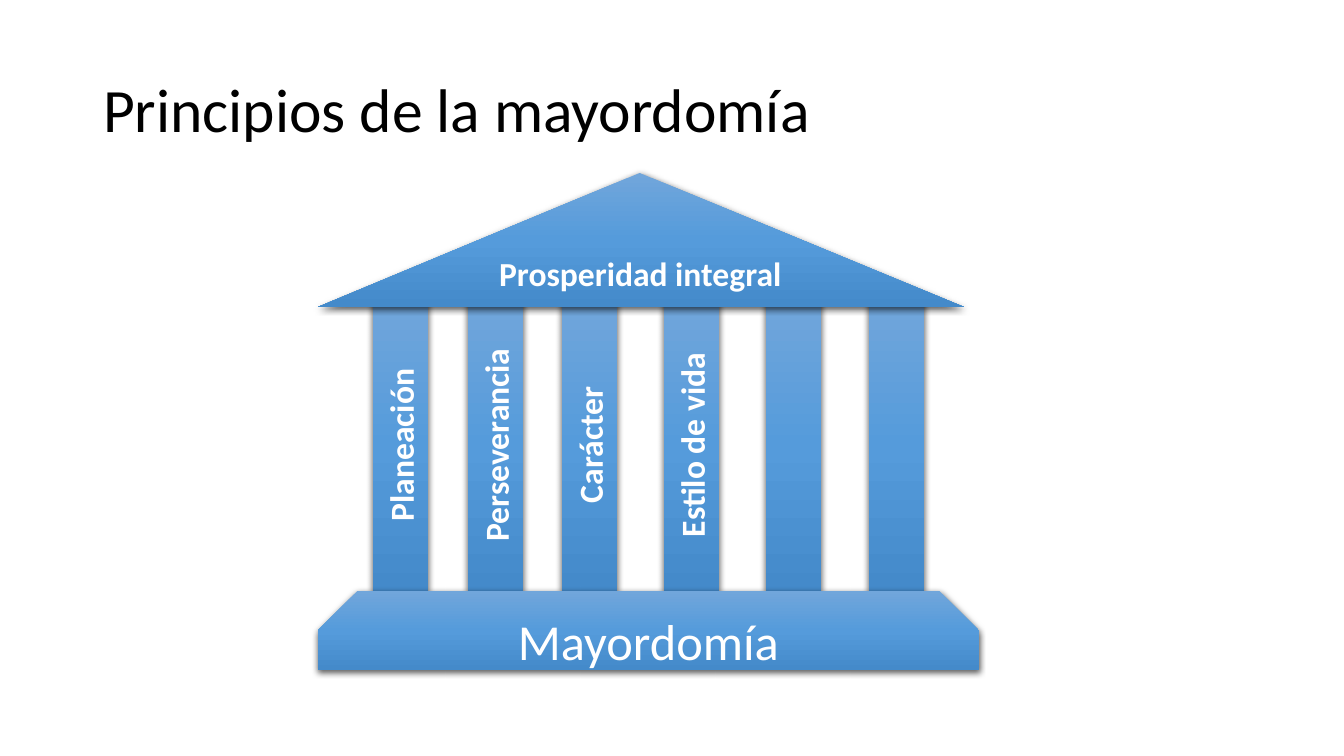
from lxml.etree import SubElement
from pptx import Presentation
from pptx.dml.color import RGBColor
from pptx.enum.shapes import MSO_SHAPE as Preset
from pptx.enum.text import MSO_ANCHOR as Anchor, PP_ALIGN as Align
from pptx.oxml.ns import qn
from pptx.util import Emu, Pt

BLACK = RGBColor(0x00, 0x00, 0x00)
WHITE = RGBColor(0xFF, 0xFF, 0xFF)
LIGHT_BLUE = RGBColor(0x71, 0xA6, 0xDB)
MID_BLUE = RGBColor(0x55, 0x9B, 0xDB)
DEEP_BLUE = RGBColor(0x44, 0x8A, 0xCA)

PILLARS = [(373, "Planeación"), (468, "Perseverancia"), (562, "Carácter"),
           (664, "Estilo de vida"), (766, ""), (869, "")]
PILLAR_TOP, PILLAR_WIDTH, BASE_TOP = 299, 55, 591


def px(length):
    return Emu(round(length * 914400 / 100.8))


class TempleSlide:
    font_name = "Calibri"
    gradient = [(0, LIGHT_BLUE), (50, MID_BLUE), (100, DEEP_BLUE)]

    def __init__(self, presentation):
        self.slide = presentation.slides.add_slide(presentation.slide_layouts[5])

    def set_text(self, shape, text, size, color, align, bold=False):
        frame = shape.text_frame
        frame.word_wrap = True
        frame.vertical_anchor = Anchor.MIDDLE
        paragraph = frame.paragraphs[0]
        paragraph.text = text
        paragraph.alignment = align
        font = paragraph.font
        font.name, font.size, font.bold = self.font_name, Pt(size), bold
        font.color.rgb = color
        return paragraph

    def title(self, text, left, top, width, height):
        shape = self.slide.shapes.title
        shape.left, shape.top = px(left), px(top)
        shape.width, shape.height = px(width), px(height)
        self.set_text(shape, text, 44, BLACK, Align.LEFT).line_spacing = 0.9

    def block(self, preset, left, top, width, height, text="", size=24,
              bold=True, adjustments=(), upward=False):
        """Add a gradient shape with a soft shadow; upward turns its text."""
        shape = self.slide.shapes.add_shape(
            preset, px(left), px(top), px(width), px(height))
        for index, value in enumerate(adjustments):
            shape.adjustments[index] = value
        shape.line.fill.background()
        self.paint(shape)
        self.cast_shadow(shape)
        if text:
            self.set_text(shape, text, size, WHITE, Align.CENTER, bold)
        if upward:
            shape.text_frame._txBody.bodyPr.set("vert", "vert270")

    def paint(self, shape):
        shape.fill.gradient()
        shape.fill.gradient_angle = 270
        stops = shape._element.spPr.find(qn("a:gradFill")).find(qn("a:gsLst"))
        for stop in list(stops):
            stops.remove(stop)
        for percent, color in self.gradient:
            stop = SubElement(stops, qn("a:gs"), pos=str(percent * 1000))
            SubElement(stop, qn("a:srgbClr"), val=str(color))

    def cast_shadow(self, shape):
        shape.shadow.inherit = False
        effects = shape._element.spPr.find(qn("a:effectLst"))
        shadow = SubElement(effects, qn("a:outerShdw"), blurRad=str(Pt(4.5)),
                            dist=str(Pt(1.5)), dir="5400000",
                            algn="ctr", rotWithShape="0")
        color = SubElement(shadow, qn("a:srgbClr"), val=str(BLACK))
        SubElement(color, qn("a:alpha"), val="63000")


def main():
    presentation = Presentation()
    presentation.slide_width, presentation.slide_height = px(1344), px(756)
    temple = TempleSlide(presentation)
    temple.title("Principios de la mayordomía", 93, 40, 1159, 146)
    for left, principle in PILLARS:
        temple.block(Preset.RECTANGLE, left, PILLAR_TOP, PILLAR_WIDTH,
                     BASE_TOP - PILLAR_TOP, principle, upward=True)
    temple.block(Preset.SNIP_2_SAME_RECTANGLE, 318, BASE_TOP, 661, 79,
                 "Mayordomía", size=36, bold=False, adjustments=(0.5, 0))
    temple.block(Preset.ISOSCELES_TRIANGLE, 318, 173, 646, 134,
                 "Prosperidad integral", adjustments=(0.498,))
    presentation.save("out.pptx")


if __name__ == "__main__":
    main()
